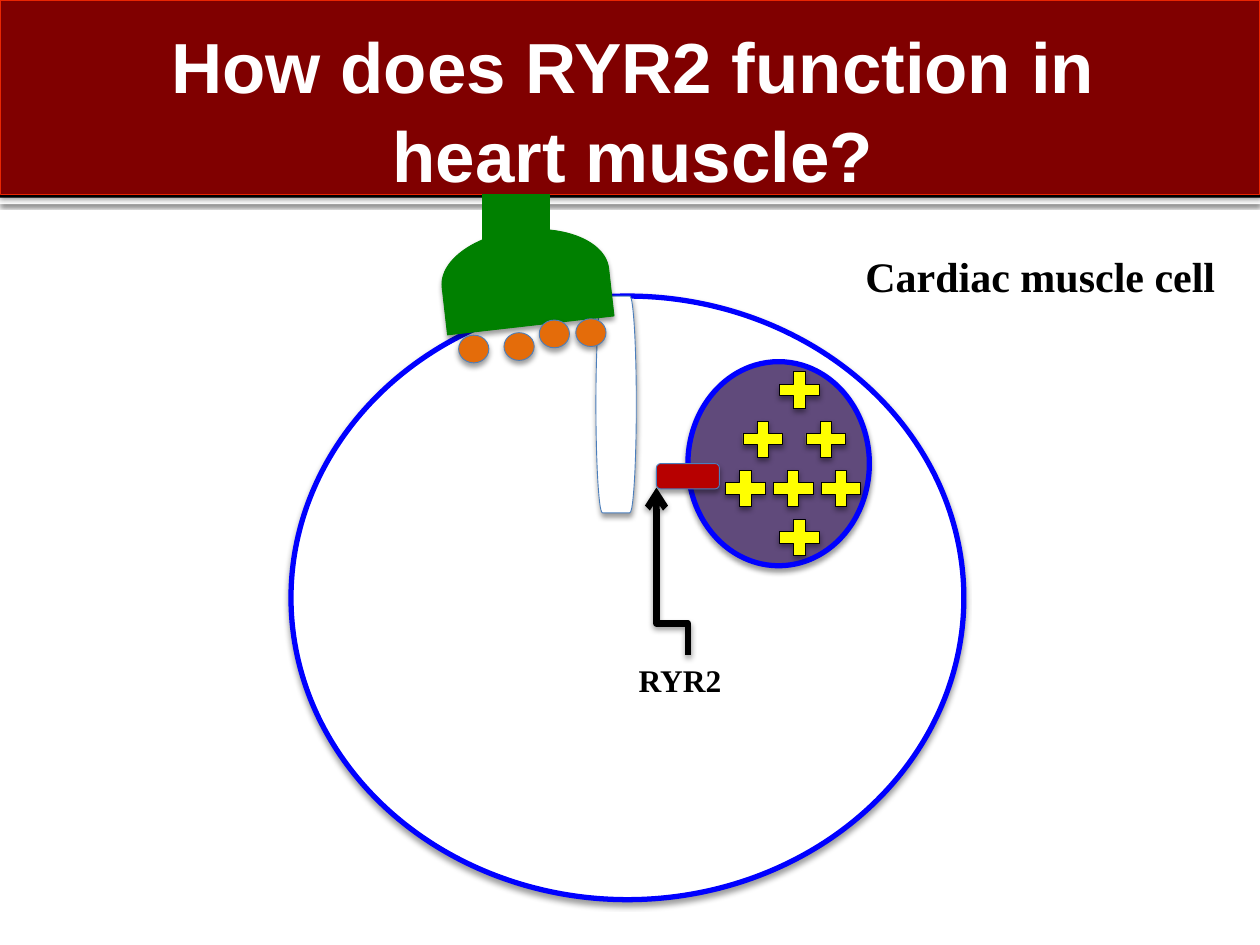
from lxml import etree
from pptx import Presentation
from pptx.dml.color import RGBColor
from pptx.enum import shapes, text
from pptx.oxml import ns
from pptx.util import Inches, Pt

WHITE = RGBColor(0xFF, 0xFF, 0xFF)
BLACK = RGBColor(0x00, 0x00, 0x00)
MAROON = RGBColor(0x80, 0x00, 0x00)
ORANGE_RED = RGBColor(0xEA, 0x26, 0x03)
BLUE = RGBColor(0x00, 0x00, 0xFF)
EDGE_BLUE = RGBColor(0x4B, 0x7E, 0xBC)
PURPLE = RGBColor(0x60, 0x4A, 0x7B)
RED = RGBColor(0xB7, 0x00, 0x00)
GREEN = RGBColor(0x00, 0x80, 0x00)
ORANGE = RGBColor(0xE4, 0x6C, 0x0A)
YELLOW = RGBColor(0xFF, 0xFF, 0x00)

COLS, ROWS = 100, 75
SOFT = (38, 3.1, 2)  # shadow: opacity %, blur pt, distance pt
KIND = shapes.MSO_SHAPE


class Canvas:
    """Holds the style and the current slide; lengths are grid columns and rows."""

    def __init__(self, prs):
        self.slide = prs.slides.add_slide(prs.slide_layouts[5])
        self.col = prs.slide_width / COLS
        self.row = prs.slide_height / ROWS

    def box(self, x, y, w, h):
        return [round(v) for v in (x * self.col, y * self.row, w * self.col, h * self.row)]

    def effects(self, sp, shadow):
        props = sp._element.spPr
        for old in props.findall(ns.qn("a:effectLst")):
            props.remove(old)
        effects = etree.SubElement(props, ns.qn("a:effectLst"))
        if shadow:
            opacity, blur, dist = shadow
            outer = etree.SubElement(effects, ns.qn("a:outerShdw"), blurRad=str(Pt(blur)),
                                     dist=str(Pt(dist)), dir="5400000", rotWithShape="0")
            color = etree.SubElement(outer, ns.qn("a:srgbClr"), val=str(BLACK))
            etree.SubElement(color, ns.qn("a:alpha"), val=str(opacity * 1000))

    def shape(self, kind, x, y, w, h, fill, line=None, width=0.5, shadow=SOFT, rotation=0):
        sp = self.slide.shapes.add_shape(kind, *self.box(x, y, w, h))
        sp.rotation = rotation
        sp.fill.solid()
        sp.fill.fore_color.rgb = fill
        if line is None:
            sp.line.fill.background()
        else:
            sp.line.color.rgb = line
            sp.line.width = Pt(width)
        self.effects(sp, shadow)
        return sp

    def set_text(self, sp, words, size, font, color):
        tf = sp.text_frame
        tf.text = words
        tf.word_wrap = True
        f = tf.paragraphs[0].runs[0].font
        f.size, f.name, f.bold = Pt(size), font, True
        f.color.rgb = color
        return tf

    def title(self, words, x, y, w, h):
        sp = self.slide.shapes.title
        sp.left, sp.top, sp.width, sp.height = self.box(x, y, w, h)
        tf = self.set_text(sp, words, 40.5, "Arial", WHITE)
        tf.auto_size = text.MSO_AUTO_SIZE.NONE
        tf.vertical_anchor = text.MSO_ANCHOR.MIDDLE
        tf.margin_left = Inches(0.1)
        tf.margin_right = tf.margin_top = tf.margin_bottom = Inches(0.05)
        p = tf.paragraphs[0]
        p.alignment = text.PP_ALIGN.CENTER
        p.line_spacing = 1.04
        self.slide.shapes._spTree.append(sp._element)  # in front of the banner

    def label(self, words, x, y, w, h, size):
        sp = self.slide.shapes.add_textbox(*self.box(x, y, w, h))
        self.set_text(sp, words, size, "Times New Roman", BLACK)

    def elbow_arrow(self, x1, y1, x2, y2, bend):
        """Elbow that leaves (x1, y1) upwards and ends in an arrow at (x2, y2)."""
        rise, run = y1 - y2, x1 - x2
        left, top = (x1 + x2 - rise) / 2, (y1 + y2 - run) / 2
        cxn = self.slide.shapes.add_connector(
            shapes.MSO_CONNECTOR.ELBOW, *self.box(left, top, left + rise, top + run))
        cxn.line.color.rgb = BLACK
        cxn.line.width = Pt(3.78)
        props = cxn._element.spPr
        xfrm = props.find(ns.qn("a:xfrm"))
        xfrm.set("rot", str(270 * 60000))
        xfrm.set("flipV", "1")
        guides = props.find(ns.qn("a:prstGeom")).find(ns.qn("a:avLst"))
        etree.SubElement(guides, ns.qn("a:gd"), name="adj1", fmla=f"val {round(bend * 100000)}")
        etree.SubElement(props.find(ns.qn("a:ln")), ns.qn("a:tailEnd"), type="arrow")
        self.effects(cxn, (38, 3.5, 2))


def main():
    prs = Presentation()
    prs.slide_width, prs.slide_height = Inches(10), Inches(7.5)
    s = Canvas(prs)

    # Title banner
    s.shape(KIND.RECTANGLE, 0, 15.7, COLS, 0.5, WHITE, shadow=(60, 2.5, 0.8))
    s.shape(KIND.RECTANGLE, 0, 0, COLS, 15.7, BLACK, shadow=None)
    s.shape(KIND.RECTANGLE, 0, 0, COLS, 15.4, MAROON, ORANGE_RED)
    s.title("How does RYR2 function in heart muscle?", 5, 1.7, 90, 13.7)

    # Muscle cell, its tubule, the calcium store and the RYR2 channel
    s.shape(KIND.OVAL, 23.1, 23.5, 53.4, 47.9, WHITE, BLUE, 3)
    s.shape(KIND.FLOWCHART_TERMINATOR, 47.3, 23.5, 3.2, 17.2, WHITE, EDGE_BLUE)
    s.shape(KIND.OVAL, 54.6, 28.7, 14.4, 16.2, PURPLE, BLUE, 3)
    s.shape(KIND.ROUNDED_RECTANGLE, 52.1, 36.8, 5, 2, RED, EDGE_BLUE)

    # Nerve ending with transmitter
    s.shape(KIND.FLOWCHART_DELAY, 37.9, 15.4, 7.6, 13.3, GREEN, GREEN, rotation=263.5)
    s.shape(KIND.FLOWCHART_PROCESS, 38.3, 15.4, 5.3, 4.2, GREEN, GREEN, shadow=None)
    for x, y in ((36.4, 26.6), (42.8, 25.4), (45.7, 25.3), (40, 26.4)):
        s.shape(KIND.OVAL, x, y, 2.4, 2.2, ORANGE, EDGE_BLUE)

    # Calcium ions: first column, spacing and count of each row
    ion_rows = ((61.3, 0, 1), (58.4, 5, 2), (57, 3.8, 3), (61.3, 0, 1))
    for i, (x, step, count) in enumerate(ion_rows):
        for j in range(count):
            s.shape(KIND.MATH_PLUS, x + j * step, 29 + i * 3.9, 4.3, 3.9, YELLOW, BLACK)

    # Labels
    s.label("Cardiac muscle cell", 67.7, 19.4, 32.3, 5, 24)
    s.label("RYR2", 49.7, 52, 18, 4, 18)
    s.elbow_arrow(54.6, 52, 52.1, 38.7, 0.19)

    prs.save("out.pptx")


if __name__ == "__main__":
    main()
